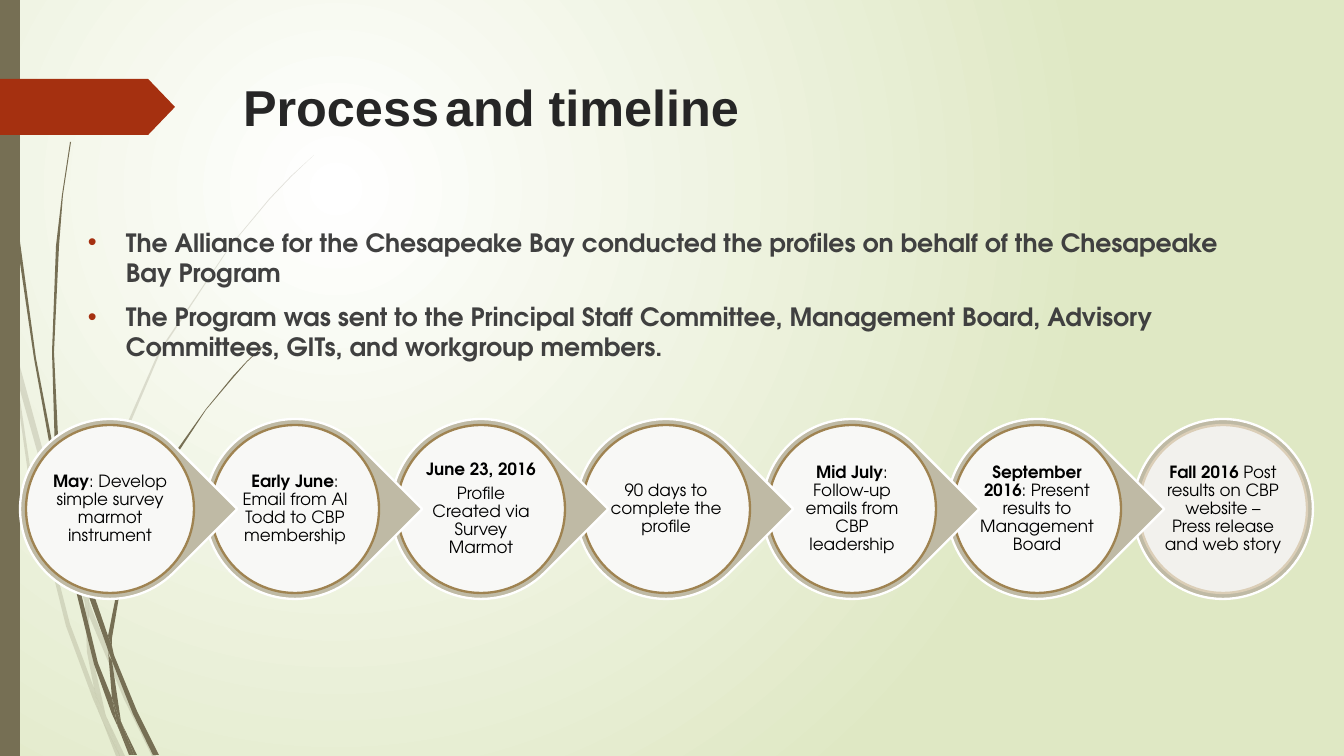
from lxml import etree
from pptx import Presentation
from pptx.dml.color import RGBColor
from pptx.enum.shapes import MSO_SHAPE
from pptx.enum.text import MSO_ANCHOR, PP_ALIGN
from pptx.oxml.ns import qn
from pptx.util import Pt

RECTANGLE = MSO_SHAPE.RECTANGLE
PENTAGON = MSO_SHAPE.PENTAGON
OVAL = MSO_SHAPE.OVAL
TEAR = MSO_SHAPE.TEAR
MIDDLE = MSO_ANCHOR.MIDDLE
CENTER = PP_ALIGN.CENTER

PX = 914400 / 134.4
OLIVE = "766F54"
RUST = "A53010"
BODY_FONT = "TeX Gyre Adventor"
rgb = RGBColor.from_string

deck = Presentation()
deck.slide_width = round(1344 * PX)
deck.slide_height = round(756 * PX)
slide = deck.slides.add_slide(deck.slide_layouts[6])
shapes = slide.shapes


def paint(shape, fill, line=None, opacity=100):
    shape.shadow.inherit = False
    shape.fill.solid()
    shape.fill.fore_color.rgb = rgb(fill)
    if opacity < 100:
        color = shape.element.spPr.xpath("./a:solidFill/a:srgbClr")[0]
        etree.SubElement(color, qn("a:alpha"), val=str(opacity * 1000))
    if line:
        shape.line.color.rgb = rgb(line)
        shape.line.width = Pt(1.25)
    else:
        shape.line.fill.background()


def write(box, margins, paragraphs, font, size, color):
    box = [round(length * PX) for length in box]
    frame = shapes.add_textbox(*box).text_frame
    frame.word_wrap = True
    frame.margin_left = frame.margin_right = round(margins[0] * PX)
    frame.margin_top = frame.margin_bottom = round(margins[1] * PX)
    for index, pieces in enumerate(paragraphs):
        paragraph = frame.add_paragraph() if index else frame.paragraphs[0]
        for text, bold in pieces:
            run = paragraph.add_run()
            run.text = text
            run.font.name = font
            run.font.size = Pt(size)
            run.font.bold = bold
            run.font.color.rgb = rgb(color)
    return frame


backdrop = slide.background.fill
backdrop.gradient()
for stop, color in zip(backdrop.gradient_stops, ("FFFFFF", "DFE8C4")):
    stop.color.rgb = rgb(color)
gradient = slide.element.xpath(".//p:bg//a:gradFill")[0]
gradient.remove(gradient.find(qn("a:lin")))
glow = etree.SubElement(gradient, qn("a:path"), path="circle")
etree.SubElement(glow, qn("a:fillToRect"), l="50000", t="50000", r="100000", b="100000")

pale_grass = [
    [(58, 526), (85, 603), (86, 591), (63, 524), (15, 348), (17, 379)],
    [(93, 612), (89, 601), (89, 616), (124, 699), (152, 756), (156, 756), (128, 698)],
    [(120, 756), (125, 756), (106, 716)],
    [(94, 688), (70, 624), (31, 473), (17, 379), (11, 353), (28, 473), (66, 626),
     (93, 699), (102, 720), (99, 712)],
    [(85, 603), (87, 652), (94, 688), (97, 698), (106, 716), (105, 712), (91, 650),
     (89, 616), (89, 613)],
    [(89, 589), (112, 466), (161, 351), (230, 247), (270, 199), (292, 176), (314, 155),
     (291, 176), (269, 199), (230, 246), (159, 351), (109, 465), (86, 589), (86, 591),
     (89, 601)],
    [(102, 720), (116, 756), (120, 756)],
    [(89, 613), (89, 616), (89, 601), (86, 591), (85, 603)],
    [(97, 698), (94, 688), (99, 712), (102, 720), (120, 756), (106, 716)],
]
dark_grass = [
    [(16, 235), (34, 358), (56, 480), (58, 485), (55, 461), (55, 457), (36, 358), (19, 234)],
    [(89, 597), (108, 650), (108, 636), (94, 595), (60, 476), (65, 509)],
    [(114, 655), (112, 646), (112, 661), (133, 714), (153, 755), (159, 755), (137, 711)],
    [(112, 698), (98, 663), (73, 560), (65, 509), (58, 481), (69, 562), (94, 664),
     (112, 714), (118, 727), (117, 723)],
    [(60, 476), (59, 457), (54, 352), (59, 246), (63, 195), (71, 142), (70, 142),
     (62, 195), (56, 246), (52, 352), (55, 453)],
    [(134, 755), (137, 755), (122, 724)],
    [(58, 481), (65, 509), (60, 476), (55, 453), (55, 457)],
    [(112, 638), (126, 556), (160, 480), (206, 410), (233, 378), (247, 362), (263, 347),
     (262, 347), (247, 361), (233, 376), (206, 409), (157, 478), (124, 555), (108, 636),
     (112, 646)],
    [(118, 727), (129, 755), (132, 755)],
    [(108, 650), (112, 698), (117, 712), (122, 724), (121, 722), (112, 661), (109, 656)],
    [(108, 650), (112, 661), (112, 646), (108, 636)],
    [(117, 712), (112, 698), (117, 723), (118, 727), (132, 755), (134, 755), (122, 724)],
]
for blades, opacity in ((pale_grass, 20), (dark_grass, 100)):
    for blade in blades:
        outline = shapes.build_freeform(*blade[0], scale=PX)
        outline.add_line_segments(blade[1:], close=True)
        paint(outline.convert_to_shape(), OLIVE, opacity=opacity)

side_bar = shapes.add_shape(RECTANGLE, 0, 0, round(20 * PX), deck.slide_height)
paint(side_bar, OLIVE)
title_flag = shapes.add_shape(PENTAGON, 0, round(79 * PX), round(175 * PX), round(56 * PX))
title_flag.adjustments[0] = 0.48
paint(title_flag, RUST)

title = write((230, 64, 1114, 106), (13, 12), [[("Process\tand timeline", True)]],
              "Arial", 27, "262626")
title_format = title.paragraphs[0]._p.get_or_add_pPr()
tab_stops = etree.SubElement(title_format, qn("a:tabLst"))
etree.SubElement(tab_stops, qn("a:tab"), pos=str(round(202 * PX)), algn="l")

summary = write((75, 220, 1185, 415), (13, 7), [
    [("The Alliance for the Chesapeake Bay conducted the profiles on behalf of "
      "the Chesapeake Bay Program", True)],
    [("The Program was sent to the Principal Staff Committee, Management Board, "
      "Advisory Committees, GITs, and workgroup members.", True)],
], BODY_FONT, 13.5, "404040")
for point in summary.paragraphs:
    point.space_before = Pt(7.5)
    point_format = point._p.get_or_add_pPr()
    point_format.set("marL", str(round(38 * PX)))
    point_format.set("indent", str(round(-38 * PX)))
    bullet_color = etree.SubElement(point_format, qn("a:buClr"))
    etree.SubElement(bullet_color, qn("a:srgbClr"), val=RUST)
    etree.SubElement(point_format, qn("a:buFont"), typeface="Arial")
    etree.SubElement(point_format, qn("a:buChar"), char="•")

steps = [
    [[("May", True), (": Develop simple survey marmot instrument", False)]],
    [[("Early June", True), (": Email from Al Todd to CBP membership", False)]],
    [[("June 23, 2016", True)], [("Profile Created via Survey Marmot", False)]],
    [[("90 days to complete the profile", False)]],
    [[("Mid July", True), (": Follow-up emails from CBP leadership", False)]],
    [[("September 2016", True), (": Present results to Management Board", False)]],
    [[("Fall 2016 ", True),
      ("Post results on CBP website – Press release and web story", False)]],
]
last = len(steps) - 1
for index in range(last, -1, -1):
    left = 20 + 1113 * index // last
    ring = shapes.add_shape(OVAL if index == last else TEAR, round(left * PX),
                            round(419 * PX), round(180 * PX), round(180 * PX))
    paint(ring, "BFBAA5", "FFFFFF")
    disc = shapes.add_shape(OVAL, round((left + 6) * PX), round(425 * PX),
                            round(168 * PX), round(168 * PX))
    if index == last:
        paint(disc, "F2F1ED", "DBCEB7")
    else:
        ring.rotation = 45
        paint(disc, "FFFFFF", "9F8351", 90)
    label = write((left + 30, 449, 120, 120), (1, 1), steps[index], BODY_FONT, 9, "000000")
    label.vertical_anchor = MIDDLE
    for paragraph in label.paragraphs:
        paragraph.alignment = CENTER
        paragraph.line_spacing = 0.9
        paragraph.space_after = Pt(3)

deck.save("out.pptx")
